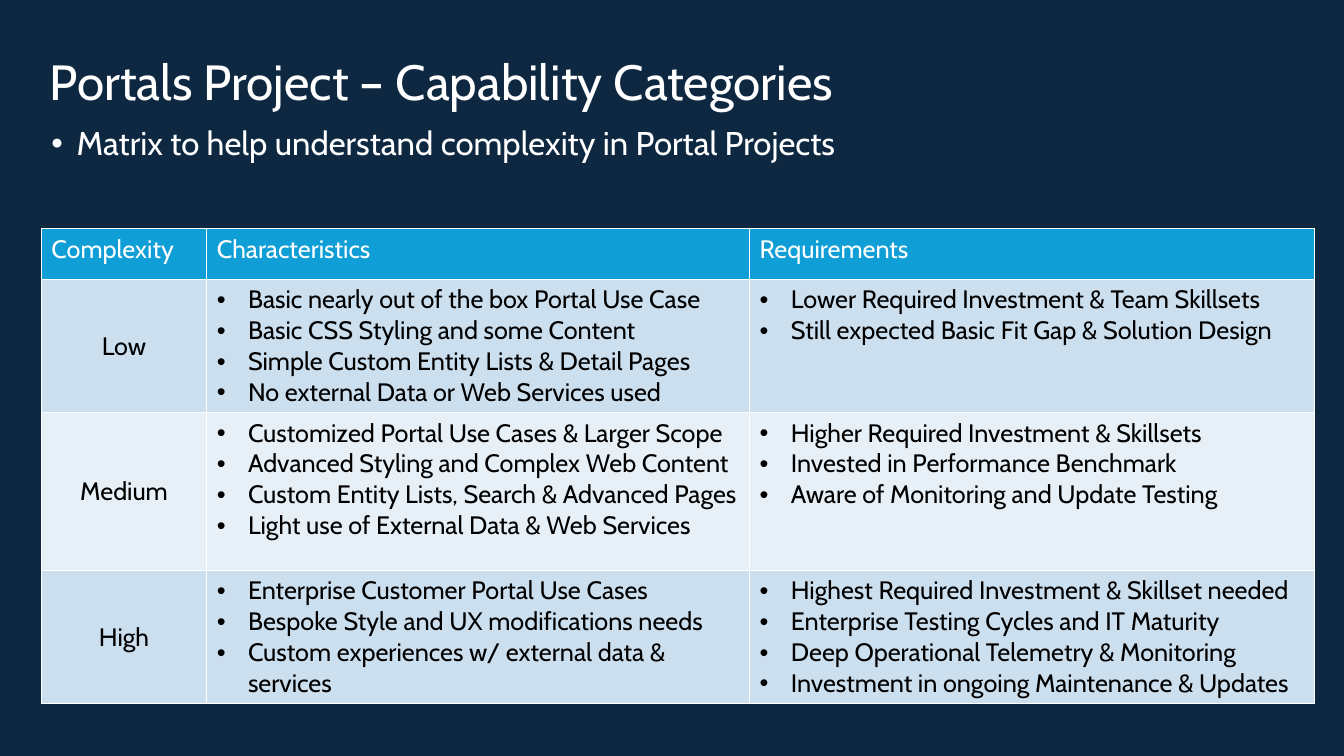
from dataclasses import dataclass

from lxml.etree import SubElement
from pptx import Presentation
from pptx.dml.color import RGBColor
from pptx.enum.text import MSO_ANCHOR, MSO_AUTO_SIZE, PP_ALIGN
from pptx.oxml.ns import qn
from pptx.util import Inches, Pt


@dataclass(frozen=True)
class Theme:
    font: str = "Cabin"
    background: str = "0E2841"
    light: str = "FFFFFF"
    dark: str = "000000"
    header: str = "0F9ED5"
    bands: tuple = ("CCDFEF", "E7F0F7")
    title_size: float = 35.3
    body_size: float = 23.5
    table_size: float = 18
    border: float = 1


def rgb(value):
    return RGBColor.from_string(value)


def write(tf, text, *, font, size, color, align=PP_ALIGN.LEFT, bullet=None,
          line_spacing=None):
    """Write one paragraph per line of text; bullet is its indent in inches."""
    for i, line in enumerate(text.split("\n")):
        p = tf.paragraphs[0] if i == 0 else tf.add_paragraph()
        p.alignment = align
        p.space_before = p.space_after = Pt(0)
        if line_spacing:
            p.line_spacing = line_spacing
        if bullet:
            pPr = p._p.get_or_add_pPr()
            pPr.set("marL", str(Inches(bullet)))
            pPr.set("indent", str(-Inches(bullet)))
            SubElement(pPr, qn("a:buFont"), typeface="Arial")
            SubElement(pPr, qn("a:buChar"), char="•")
        r = p.add_run()
        r.text = line
        r.font.name = font
        r.font.size = Pt(size)
        r.font.bold = False
        r.font.color.rgb = rgb(color)


class Deck:
    """Places elements on a slide; lengths are percent of its width or height."""

    def __init__(self, theme):
        self.theme = theme
        self.prs = Presentation()
        self.prs.slide_width, self.prs.slide_height = Inches(13.33), Inches(7.5)
        self.slide = self.prs.slides.add_slide(self.prs.slide_layouts[1])
        fill = self.slide.background.fill
        fill.solid()
        fill.fore_color.rgb = rgb(theme.background)

    def x(self, percent):
        return round(self.prs.slide_width * percent / 100)

    def y(self, percent):
        return round(self.prs.slide_height * percent / 100)

    def place(self, sp, left, top, width, height):
        sp.left, sp.top = self.x(left), self.y(top)
        sp.width, sp.height = self.x(width), self.y(height)
        sp.text_frame.word_wrap = True
        sp.text_frame.auto_size = MSO_AUTO_SIZE.NONE
        return sp.text_frame

    def title(self, text, *box):
        tf = self.place(self.slide.shapes.title, *box)
        tf.margin_left = tf.margin_right = tf.margin_top = tf.margin_bottom = 0
        tf.vertical_anchor = MSO_ANCHOR.MIDDLE
        write(tf, text, font=self.theme.font, size=self.theme.title_size,
              color=self.theme.light, line_spacing=Pt(31.4))

    def body(self, text, *box):
        tf = self.place(self.slide.placeholders[1], *box)
        tf.vertical_anchor = MSO_ANCHOR.TOP
        write(tf, text, font=self.theme.font, size=self.theme.body_size,
              color=self.theme.light, bullet=0.25, line_spacing=0.9)

    def cell(self, cell, text, fill, **style):
        tcPr = cell._tc.get_or_add_tcPr()
        for side in ("lnL", "lnR", "lnT", "lnB"):
            ln = SubElement(tcPr, qn(f"a:{side}"), w=str(Pt(self.theme.border)))
            solid = SubElement(ln, qn("a:solidFill"))
            SubElement(solid, qn("a:srgbClr"), val=self.theme.light)
        cell.fill.solid()
        cell.fill.fore_color.rgb = rgb(fill)
        write(cell.text_frame, text, font=self.theme.font,
              size=self.theme.table_size, **style)

    def table(self, header, rows, left, top, widths, heights):
        t = self.theme
        table = self.slide.shapes.add_table(
            len(heights), len(widths), self.x(left), self.y(top),
            self.x(sum(widths)), self.y(sum(heights))).table
        table.horz_banding = False
        for column, width in zip(table.columns, widths):
            column.width = self.x(width)
        for row, height in zip(table.rows, heights):
            row.height = self.y(height)
        for j, text in enumerate(header):
            self.cell(table.cell(0, j), text, t.header, color=t.light)
        for i, (level, *lists) in enumerate(rows):
            fill = t.bands[i % len(t.bands)]
            label = table.cell(i + 1, 0)
            label.vertical_anchor = MSO_ANCHOR.MIDDLE
            self.cell(label, level, fill, color=t.dark, align=PP_ALIGN.CENTER)
            for j, text in enumerate(lists, 1):
                self.cell(table.cell(i + 1, j), text, fill, color=t.dark,
                          bullet=0.31)


HEADER = ("Complexity", "Characteristics", "Requirements")
ROWS = (
    ("Low",
     "Basic nearly out of the box Portal Use Case\n"
     "Basic CSS Styling and some Content\n"
     "Simple Custom Entity Lists & Detail Pages\n"
     "No external Data or Web Services used",
     "Lower Required Investment & Team Skillsets\n"
     "Still expected Basic Fit Gap & Solution Design"),
    ("Medium",
     "Customized Portal Use Cases & Larger Scope\n"
     "Advanced Styling and Complex Web Content\n"
     "Custom Entity Lists, Search & Advanced Pages\n"
     "Light use of External Data & Web Services",
     "Higher Required Investment & Skillsets\n"
     "Invested in Performance Benchmark\n"
     "Aware of Monitoring and Update Testing"),
    ("High",
     "Enterprise Customer Portal Use Cases\n"
     "Bespoke Style and UX modifications needs\n"
     "Custom experiences w/ external data & services",
     "Highest Required Investment & Skillset needed\n"
     "Enterprise Testing Cycles and IT Maturity\n"
     "Deep Operational Telemetry & Monitoring\n"
     "Investment in ongoing Maintenance & Updates"),
)


def main():
    deck = Deck(Theme())
    deck.title("Portals Project – Capability Categories", 3.68, 8.67, 90.92, 6.13)
    deck.body("Matrix to help understand complexity in Portal Projects",
              3.08, 16.13, 94.7, 7.87)
    deck.table(HEADER, ROWS, 3.08, 30.27, widths=(12.3, 40.4, 42),
               heights=(6.7, 16.9, 20.9, 16.9))
    deck.prs.save("out.pptx")


if __name__ == "__main__":
    main()
